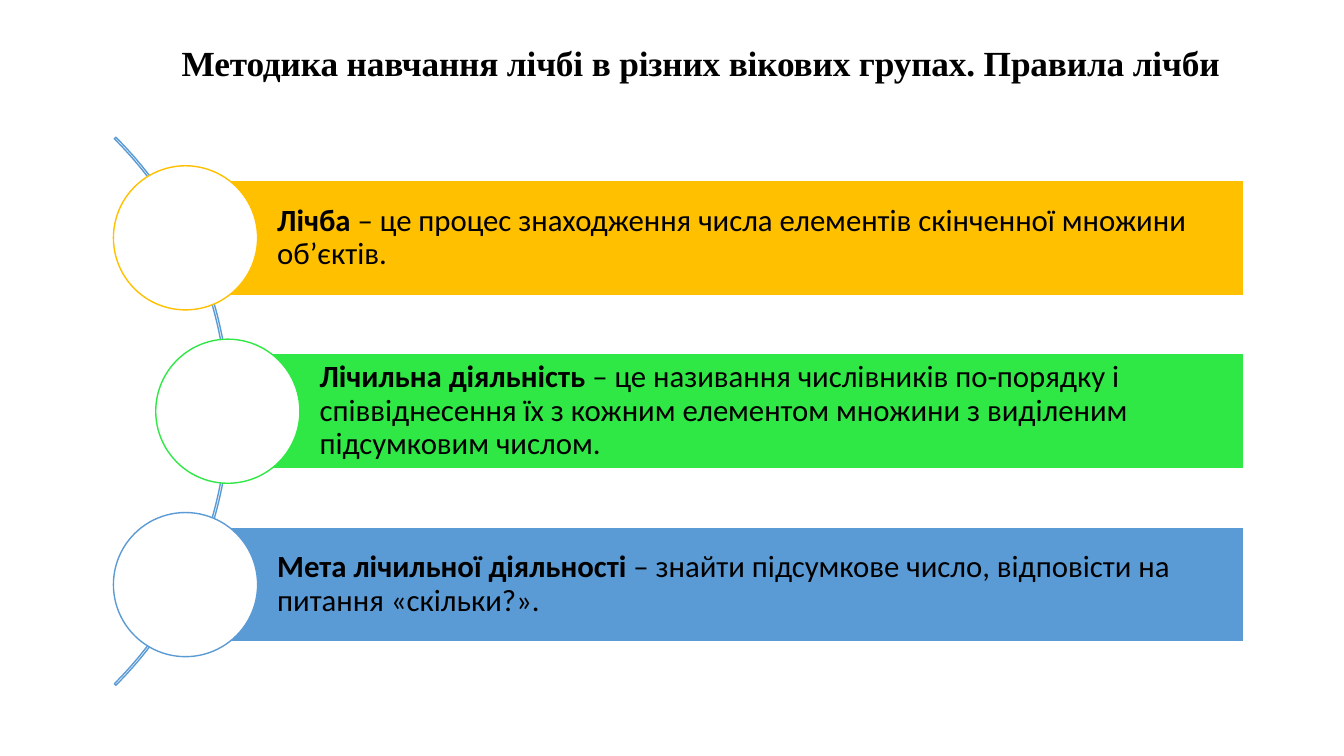
from dataclasses import dataclass

from pptx import Presentation
from pptx.dml.color import RGBColor
from pptx.enum.shapes import MSO_SHAPE as Shape
from pptx.enum.text import MSO_ANCHOR as Anchor, MSO_AUTO_SIZE as AutoSize, PP_ALIGN as Align
from pptx.util import Inches, Pt


@dataclass(frozen=True)
class Theme:
    black: str = "000000"
    white: str = "FFFFFF"
    amber: str = "FFC000"
    green: str = "30E845"
    blue: str = "5B9BD5"
    title_font: str = "Times New Roman"
    body_font: str = "Calibri"
    title_size: float = 25.2
    body_size: float = 22
    line_width: float = 1
    line_spacing: float = 0.9


class SlideBuilder:
    """Draws the title, arc, bars and circles of one slide in a theme."""

    def __init__(self, slide, theme):
        self.slide = slide
        self.theme = theme

    def apply(self, target, values):
        for name, value in values.items():
            setattr(target, name, value)

    def place(self, shape, left, top, width, height):
        bounds = {"left": left, "top": top, "width": width, "height": height}
        self.apply(shape, {name: Inches(value) for name, value in bounds.items()})

    def add_text(self, paragraph, text, font, size, bold):
        run = paragraph.add_run()
        run.text = text
        self.apply(run.font, {"name": font, "size": Pt(size), "bold": bold})
        run.font.color.rgb = RGBColor.from_string(self.theme.black)
        return run

    def title(self, text, *bounds):
        title = self.slide.shapes.title
        self.place(title, *bounds)
        self.apply(title.text_frame, {"word_wrap": True, "auto_size": AutoSize.NONE,
                                      "vertical_anchor": Anchor.MIDDLE})
        paragraph = title.text_frame.paragraphs[0]
        self.apply(paragraph, {"alignment": Align.CENTER,
                               "line_spacing": self.theme.line_spacing})
        run = self.add_text(paragraph, text, self.theme.title_font, self.theme.title_size, True)
        run._r.get_or_add_rPr().set("spc", "-10")

    def shape(self, kind, bounds, fill, line):
        shape = self.slide.shapes.add_shape(kind, *map(Inches, bounds))
        shape.shadow.inherit = False
        if fill:
            shape.fill.solid()
            shape.fill.fore_color.rgb = RGBColor.from_string(fill)
        else:
            shape.fill.background()
        shape.line.color.rgb = RGBColor.from_string(line)
        shape.line.width = Pt(self.theme.line_width)
        return shape

    def round_shape(self, kind, center_x, center_y, diameter, fill, line):
        bounds = (center_x - diameter / 2, center_y - diameter / 2, diameter, diameter)
        return self.shape(kind, bounds, fill, line)

    def arc(self, center_x, center_y, diameter):
        arc = self.round_shape(Shape.BLOCK_ARC, center_x, center_y, diameter,
                               None, self.theme.blue)
        for index, value in enumerate((189, 27, 0.0028)):
            arc.adjustments[index] = value

    def bar(self, left, middle, right, height, color, term, meaning):
        bounds = (left, middle - height / 2, right - left, height)
        frame = self.shape(Shape.RECTANGLE, bounds, color, self.theme.white).text_frame
        self.apply(frame, {"word_wrap": True, "vertical_anchor": Anchor.MIDDLE,
                           "margin_left": Inches(0.91), "margin_top": Inches(0.06),
                           "margin_right": Inches(0.06), "margin_bottom": Inches(0.06)})
        paragraph = frame.paragraphs[0]
        self.apply(paragraph, {"alignment": Align.LEFT,
                               "line_spacing": self.theme.line_spacing})
        for text, bold in ((term + " ", True), (meaning, False)):
            self.add_text(paragraph, text, self.theme.body_font, self.theme.body_size, bold)

    def circle(self, center_x, center_y, diameter, color):
        self.round_shape(Shape.OVAL, center_x, center_y, diameter, self.theme.white, color)


def main():
    theme = Theme()
    presentation = Presentation()
    presentation.slide_width = Inches(13.33)
    presentation.slide_height = Inches(7.5)
    builder = SlideBuilder(presentation.slides.add_slide(presentation.slide_layouts[5]), theme)

    builder.title("Методика навчання лічбі в різних вікових групах. Правила лічби",
                  1.49, 0.41, 10.92, 0.48)

    middle, pitch = 4.08, 1.72
    builder.arc(-1.57, middle, 7.69)
    definitions = [
        (1.84, theme.amber, "Лічба",
         "– це процес знаходження числа елементів скінченної множини об’єктів."),
        (2.26, theme.green, "Лічильна діяльність",
         "– це називання числівників по-порядку і співвіднесення їх з кожним "
         "елементом множини з виділеним підсумковим числом."),
        (1.84, theme.blue, "Мета лічильної діяльності",
         "– знайти підсумкове число, відповісти на питання «скільки?»."),
    ]
    for row, (left, color, term, meaning) in enumerate(definitions):
        row_middle = middle + (row - 1) * pitch
        builder.bar(left, row_middle, 12.34, 1.14, color, term, meaning)
        builder.circle(left, row_middle, 1.43, color)

    presentation.save("out.pptx")


if __name__ == "__main__":
    main()
